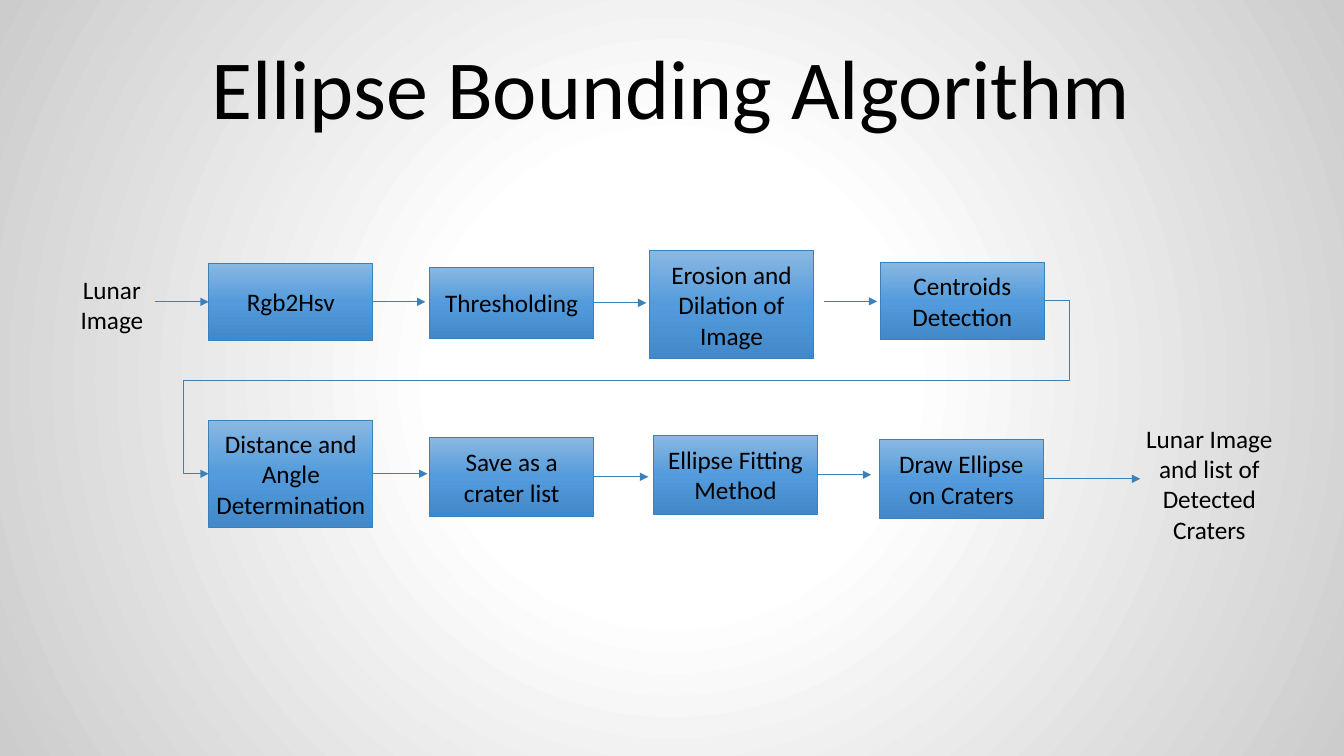
from pptx import Presentation
from pptx.dml.color import RGBColor as Rgb
from pptx.enum.shapes import MSO_CONNECTOR as Conn, MSO_SHAPE as Kind
from pptx.enum.text import MSO_ANCHOR as Anchor, PP_ALIGN as Align
from pptx.oxml import parse_xml
from pptx.oxml.ns import nsdecls, qn
from pptx.util import Inches, Pt

THEME = {
    "font": "Calibri", "ink": "000000", "line": "3A81BA",
    "title": 60, "body": 18, "stroke": 0.75,
    "page": [(0, "FFFFFF"), (30, "FFFFFF"), (100, "CCCCCC")],
    "step": [(0, "8AB8E2"), (50, "539BDC"), (100, "4389C9")],
}
LINEAR = '<a:lin ang="5400000" scaled="0"/>'
CIRCLE = ('<a:path path="circle"><a:fillToRect l="50000" t="50000" '
          'r="50000" b="50000"/></a:path>')

TITLE = "Ellipse Bounding Algorithm"
WIDE = 1.63
STEPS = [
    ("Rgb2Hsv", 2.07, 2.61, 0.77, 0.1),
    ("Thresholding", 4.26, 2.65, 0.71, 0.1),
    ("Erosion and Dilation of Image", 6.44, 2.49, 1.07, 0.1),
    ("Centroids Detection", 8.73, 2.6, 0.77, 0.1),
    ("Distance and Angle Determination", 2.07, 4.17, 1.06, 0.05),
    ("Save as a crater list", 4.26, 4.34, 0.78, 0.1),
    ("Ellipse Fitting Method", 6.48, 4.32, 0.78, 0.1),
    ("Draw Ellipse on Craters", 8.72, 4.36, 0.78, 0.1),
]
ENDS = [
    (["Lunar Image"], 0.58, 2.67, 1.06, 0.71),
    (["Lunar Image", "and list of Detected Craters"], 11.18, 4.15, 1.63, 1.31),
]
LINKS = [(0, 4.22), (1, 6.41), (4, 4.24), (5, 6.43), (6, 8.64), (7, 11.31)]
INPUT = (1.54, 0)
GAP = (8.17, 8.7, 2.99)
TURN = (3, 4, [-3000, 45800, 103000])


def blend(owner, fill, stops, way):
    fill.solid()
    marks = "".join(
        f'<a:gs pos="{pos * 1000}"><a:srgbClr val="{tint}"/></a:gs>'
        for pos, tint in stops)
    grad = parse_xml(f'<a:gradFill rotWithShape="1" {nsdecls("a")}>'
                     f'<a:gsLst>{marks}</a:gsLst>{way}</a:gradFill>')
    old = next(owner.iter(qn("a:solidFill")))
    old.getparent().replace(old, grad)


def write(shape, lines, size, anchor, side=0.1, edge=0.05, space=None):
    frame = shape.text_frame
    frame.word_wrap = True
    frame.vertical_anchor = anchor
    frame.margin_left = frame.margin_right = Inches(side)
    frame.margin_top = frame.margin_bottom = Inches(edge)
    for num, line in enumerate(lines):
        para = frame.add_paragraph() if num else frame.paragraphs[0]
        para.alignment = Align.CENTER
        if space:
            para.line_spacing = space
        run = para.add_run()
        run.text = line
        run.font.name = THEME["font"]
        run.font.size = Pt(size)
        run.font.color.rgb = Rgb.from_string(THEME["ink"])


def stroke(line):
    line.color.rgb = Rgb.from_string(THEME["line"])
    line.width = Pt(THEME["stroke"])


def label(slide, lines, place, *args, **opts):
    box = slide.shapes.add_textbox(*map(Inches, place))
    write(box, lines, *args, **opts)


def step(slide, text, left, top, high, side):
    box = slide.shapes.add_shape(
        Kind.RECTANGLE, *map(Inches, (left, top, WIDE, high)))
    box.shadow.inherit = False
    blend(box.element.spPr, box.fill, THEME["step"], LINEAR)
    stroke(box.line)
    write(box, [text], THEME["body"], Anchor.MIDDLE, side)
    return box


def arrow(slide, start, end, kind=Conn.STRAIGHT):
    link = slide.shapes.add_connector(kind, *start, *end)
    stroke(link.line)
    link.line._get_or_add_ln().append(
        parse_xml(f'<a:tailEnd type="triangle" {nsdecls("a")}/>'))
    link.element.spPr.append(parse_xml(f'<a:effectLst {nsdecls("a")}/>'))
    return link


def middle(box):
    return box.top + box.height // 2


def main():
    deck = Presentation()
    deck.slide_width, deck.slide_height = Inches(13.33), Inches(7.5)
    slide = deck.slides.add_slide(deck.slide_layouts[6])
    page = slide.background
    blend(slide.element.cSld, page.fill, THEME["page"], CIRCLE)

    label(slide, [TITLE], (1, 0.18, 11.31, 1.32), THEME["title"],
          Anchor.BOTTOM, side=0.13, edge=0.13, space=0.9)
    boxes = [step(slide, *item) for item in STEPS]
    for lines, *place in ENDS:
        label(slide, lines, place, THEME["body"], Anchor.TOP)

    for num, stop in LINKS:
        box = boxes[num]
        mid = middle(box)
        link = arrow(slide, (box.left + box.width, mid), (Inches(stop), mid))
        link.begin_connect(box, 3)

    start, num = INPUT
    box = boxes[num]
    mid = middle(box)
    link = arrow(slide, (Inches(start), mid), (box.left, mid))
    link.end_connect(box, 1)

    start, stop, mid = map(Inches, GAP)
    arrow(slide, (start, mid), (stop, mid))

    first, last, bends = TURN
    head, tail = boxes[first], boxes[last]
    link = arrow(slide, (head.left + head.width, middle(head)),
                 (tail.left, middle(tail)), Conn.ELBOW)
    link.begin_connect(head, 3)
    link.end_connect(tail, 1)
    geom = link.element.spPr.find(qn("a:prstGeom"))
    geom.set("prst", "bentConnector5")
    guides = "".join(f'<a:gd name="adj{num}" fmla="val {bend}"/>'
                     for num, bend in enumerate(bends, 1))
    geom.replace(geom.find(qn("a:avLst")), parse_xml(
        f'<a:avLst {nsdecls("a")}>{guides}</a:avLst>'))

    deck.save("out.pptx")


if __name__ == "__main__":
    main()
